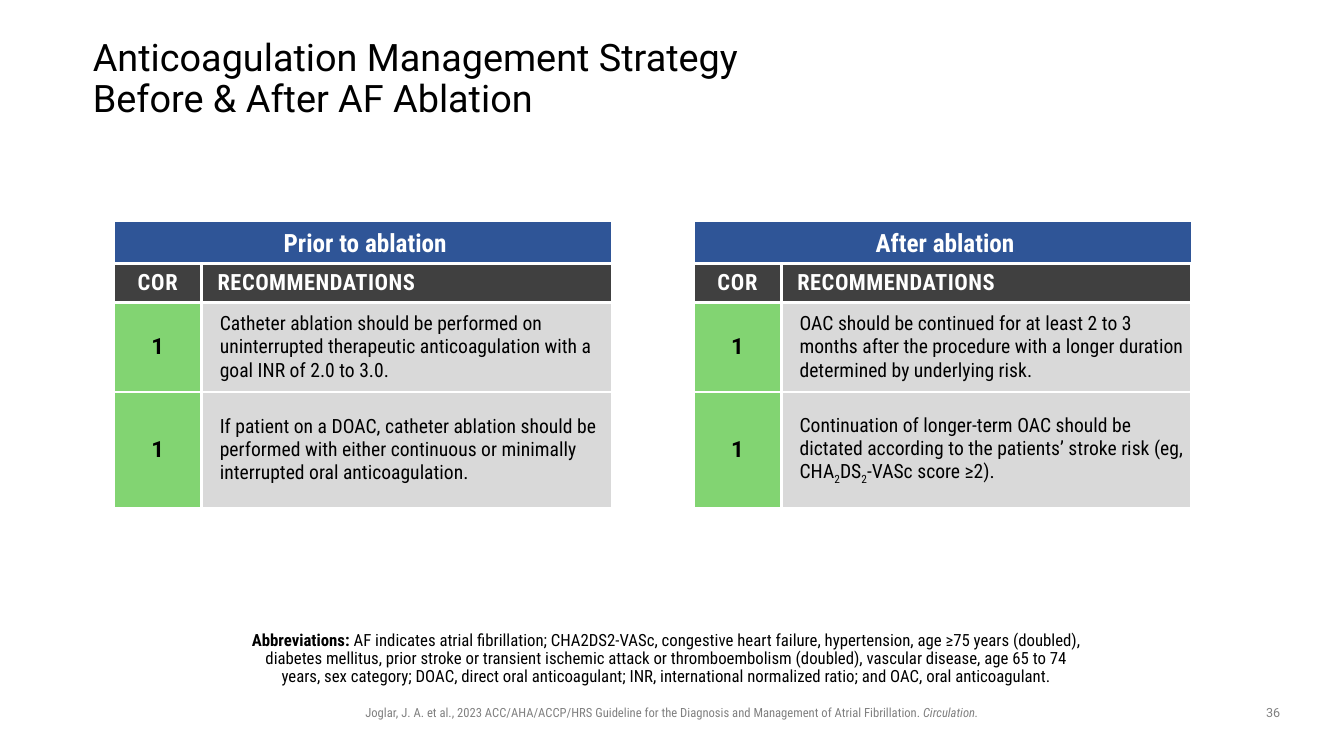
from lxml import etree
from pptx import Presentation
from pptx import util as u
from pptx.dml.color import RGBColor
from pptx.enum import shapes, text
from pptx.oxml import ns

BODY, HEAD = "Roboto Condensed", "Roboto"
WHITE, BLACK, GRAY = "FFFFFF", "000000", "808080"
CENTER = text.PP_ALIGN.CENTER
MIDDLE = text.MSO_ANCHOR.MIDDLE
BASE = dict(name=BODY, size=u.Pt(14), bold=False, color=BLACK)
BANNER = dict(BASE, size=u.Pt(18), bold=True, color=WHITE)
COLUMN_HEAD = dict(BASE, size=u.Pt(16), bold=True, color=WHITE)
CLASS_MARK = dict(BASE, name=HEAD, size=u.Pt(16), bold=True)
NOTE = dict(BASE, size=u.Pt(12))
CITATION = dict(BASE, size=u.Pt(9), color=GRAY)

PANELS = [
    ("Prior to ablation", [
        [("Catheter ablation should be performed on uninterrupted therapeutic "
          "anticoagulation with a goal INR of 2.0 to 3.0.", {})],
        [("If patient on a DOAC, catheter ablation should be performed with either "
          "continuous or minimally interrupted oral anticoagulation.", {})],
    ]),
    ("After ablation", [
        [("OAC should be continued for at least 2 to 3 months after the procedure "
          "with a longer duration determined by underlying risk.", {})],
        [("Continuation of longer-term OAC should be dictated according to the "
          "patients’ stroke risk (eg, CHA", {}),
         ("2", {"baseline": -25000}), ("DS", {}),
         ("2", {"baseline": -25000}), ("-VASc score ≥2).", {})],
    ]),
]


def rgb(value):
    return RGBColor.from_string(value)


def paint(target, color):
    target.fill.solid()
    target.fill.fore_color.rgb = rgb(color)


def add_run(p, words, fmt):
    r = p.add_run()
    r.text = words
    for key, value in fmt.items():
        if key == "color":
            r.font.color.rgb = rgb(value)
        elif key in ("baseline", "spc"):
            r._r.get_or_add_rPr().set(key, str(value))
        else:
            setattr(r.font, key, value)


def write(tf, runs, fmt, align=None, spacing=None):
    tf.word_wrap = True
    p = tf.paragraphs[0]
    p.alignment = align
    p.line_spacing = spacing
    for words, extra in runs:
        for i, line in enumerate(words.split("\n")):
            if i:
                p.add_line_break()
            add_run(p, line, {**fmt, **extra})
    return p


def set_margins(target, left, top, right, bottom):
    for side, value in dict(left=left, top=top, right=right, bottom=bottom).items():
        setattr(target, f"margin_{side}", u.Cm(value))


def add_text(s, box, runs, fmt, align=None, spacing=None, margins=None, anchor=None):
    tf = s.shapes.add_textbox(*map(u.Cm, box)).text_frame
    if margins:
        set_margins(tf, *margins)
    tf.vertical_anchor = anchor
    write(tf, runs, fmt, align, spacing)


def add_banner(s, left, title):
    sp = s.shapes.add_shape(shapes.MSO_SHAPE.RECTANGLE,
                            *map(u.Cm, (left, 5.56, 12.57, 1.07)))
    sp.shadow.inherit = False
    paint(sp, "2F5597")
    sp.line.color.rgb = rgb(WHITE)
    sp.line.width = u.Pt(2)
    tf = sp.text_frame
    set_margins(tf, 0.1, 0.15, 0, 0)
    tf.vertical_anchor = MIDDLE
    write(tf, [(title, {})], BANNER, CENTER, 0.9)


def add_borders(cell):
    tcPr = cell._tc.get_or_add_tcPr()
    for i, side in enumerate("LRTB"):
        ln = etree.Element(ns.qn(f"a:ln{side}"), w=str(u.Pt(2.25)))
        fill = etree.SubElement(ln, ns.qn("a:solidFill"))
        etree.SubElement(fill, ns.qn("a:srgbClr"), val=WHITE)
        tcPr.insert(i, ln)


def fill_cell(cell, runs, fmt, color, align=None, indent=0, margins=None):
    if margins:
        set_margins(cell, *margins)
    cell.vertical_anchor = MIDDLE
    paint(cell, color)
    add_borders(cell)
    p = write(cell.text_frame, runs, fmt, align)
    if indent:
        p._p.get_or_add_pPr().set("marL", str(u.Cm(indent)))


def add_recommendations(s, left, items):
    widths, heights = (2.21, 10.34), (0.97, 2.26, 2.92)
    table = s.shapes.add_table(3, 2, *map(u.Cm, (left, 6.65, sum(widths),
                                                 sum(heights)))).table
    table.first_row = table.horz_banding = False
    for column, width in zip(table.columns, widths):
        column.width = u.Cm(width)
    for row, height in zip(table.rows, heights):
        row.height = u.Cm(height)
    fill_cell(table.cell(0, 0), [("COR", {"spc": 50})], COLUMN_HEAD, "404040", CENTER)
    fill_cell(table.cell(0, 1), [("RECOMMENDATIONS", {"spc": 40})], COLUMN_HEAD,
              "404040", indent=0.15)
    margins = (0.13,) * 4
    for i, runs in enumerate(items, 1):
        fill_cell(table.cell(i, 0), [("1", {})], CLASS_MARK, "82D472", CENTER,
                  margins=margins)
        fill_cell(table.cell(i, 1), runs, BASE, "D9D9D9", indent=0.33,
                  margins=margins)


def main():
    prs = Presentation()
    prs.slide_width, prs.slide_height = u.Cm(33.87), u.Cm(19.05)
    s = prs.slides.add_slide(prs.slide_layouts[6])
    add_text(s, (2.34, 1.02, 24.16, 1.98),
             [("Anticoagulation Management Strategy \nBefore & After AF Ablation", {})],
             dict(BASE, name=HEAD, size=u.Pt(27)), spacing=0.9,
             margins=(0, 0, 0, 0), anchor=MIDDLE)
    for i, (title, items) in enumerate(PANELS):
        left = 2.87 + 14.61 * i
        add_banner(s, left, title)
        add_recommendations(s, left, items)
    add_text(s, (6.22, 15.8, 21.41, 1.45), [
        ("Abbreviations: ", {"bold": True}),
        ("AF indicates atrial fibrillation; CHA2DS2-VASc, congestive heart failure, "
         "hypertension, age ≥75 years (doubled), diabetes mellitus, prior stroke or "
         "transient ischemic attack or thromboembolism (doubled), vascular disease, "
         "age 65 to 74 years, sex category; DOAC, direct oral anticoagulant; INR, "
         "international normalized ratio; and OAC, oral anticoagulant.", {}),
    ], NOTE, CENTER, 0.9, (0, 0.13, 0.25, 0.13))
    add_text(s, (7.47, 17.65, 18.92, 0.64), [
        ("Joglar, J. A. et al., 2023 ACC/AHA/ACCP/HRS Guideline for the Diagnosis "
         "and Management of Atrial Fibrillation. ", {}),
        ("Circulation.", {"italic": True}),
    ], CITATION, CENTER)
    add_text(s, (31.55, 17.65, 1.07, 0.66), [("36", {})],
             dict(CITATION, name=HEAD), CENTER)
    prs.save("out.pptx")


if __name__ == "__main__":
    main()
